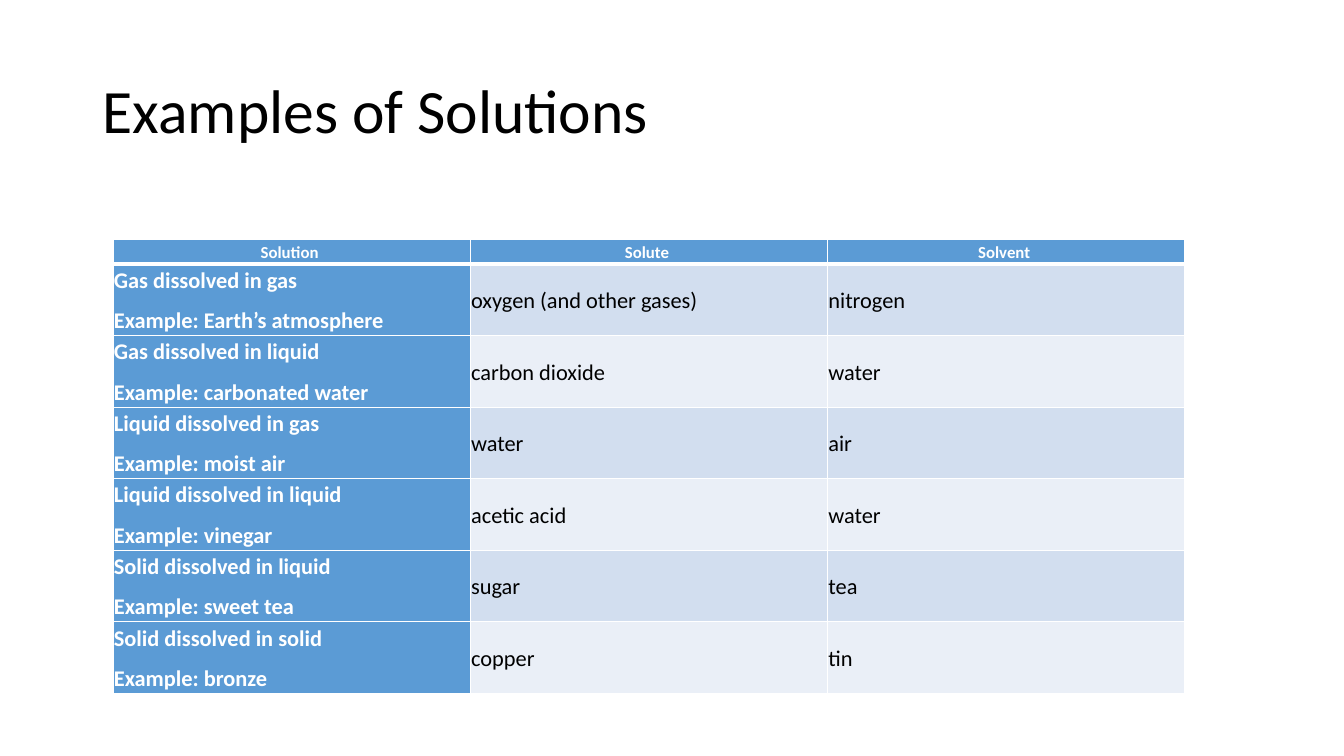
from lxml import etree
from pptx import Presentation
from pptx import util as u
from pptx.dml.color import RGBColor
from pptx.enum import text
from pptx.oxml.ns import qn

FONT = "Calibri"
BLUE, WHITE, BLACK = "5B9BD5", "FFFFFF", "000000"
BANDS = ("D2DEEF", "EAEFF7")
HEADINGS = ("Solution ", "Solute ", "Solvent ")
SOLUTIONS = (
    ("Gas dissolved in gas\nExample: Earth’s atmosphere", "oxygen (and other gases)", "nitrogen"),
    ("Gas dissolved in liquid\nExample: carbonated water", "carbon dioxide", "water"),
    ("Liquid dissolved in gas\nExample: moist air", "water", "air"),
    ("Liquid dissolved in liquid\nExample: vinegar", "acetic acid", "water"),
    ("Solid dissolved in liquid\nExample: sweet tea", "sugar", "tea"),
    ("Solid dissolved in solid\nExample: bronze", "copper", "tin"),
)
HEADER_HEIGHT, ROW_HEIGHT = 0.24, 0.71


def color(value):
    """Turn a hex string into a colour."""
    return RGBColor.from_string(value)


def set_attributes(target, values):
    """Set every attribute named in a dict of format values."""
    for name, value in values.items():
        setattr(target, name, value)


def write_text(frame, content, font, ink, layout):
    """Write one formatted paragraph for each line of the content."""
    frame.text = content
    for paragraph in frame.paragraphs:
        set_attributes(paragraph, layout)
        run = paragraph.runs[0]
        set_attributes(run.font, {"name": FONT, **font})
        run.font.color.rgb = color(ink)


def add_borders(cell, widths):
    """Draw white cell borders from a dict of side and width in points."""
    properties = cell._tc.get_or_add_tcPr()
    for index, (side, width) in enumerate(widths.items()):
        line = etree.Element(qn(f"a:ln{side}"), w=str(u.Pt(width)))
        fill = etree.SubElement(line, qn("a:solidFill"))
        etree.SubElement(fill, qn("a:srgbClr"), val=WHITE)
        properties.insert(index, line)


def add_title(slide, left, top, width, height):
    """Place the slide title in the given box."""
    box = slide.shapes.add_textbox(*map(u.Inches, (left, top, width, height)))
    set_attributes(box.text_frame, {
        "word_wrap": True, "vertical_anchor": text.MSO_ANCHOR.MIDDLE})
    write_text(box.text_frame, "Examples of Solutions", {"size": u.Pt(44)},
               BLACK, {"line_spacing": 0.9})


def format_cell(cell, content, row, column):
    """Fill a cell and style it as heading, row label or value."""
    is_header, is_label = row == 0, column == 0
    is_strong = is_header or is_label
    margin = u.Inches(0.01)
    set_attributes(cell, {
        "vertical_anchor": text.MSO_ANCHOR.MIDDLE, "margin_left": margin,
        "margin_right": margin, "margin_top": margin, "margin_bottom": margin})
    cell.fill.solid()
    cell.fill.fore_color.rgb = color(BLUE if is_strong else BANDS[(row - 1) % 2])
    layout = {
        "line_spacing": 1.07,
        "space_after": u.Pt(8 if is_label and not is_header else 0),
        "alignment": text.PP_ALIGN.CENTER if is_header else text.PP_ALIGN.LEFT}
    font = {"size": u.Pt(12 if is_header else 16), "bold": is_strong}
    write_text(cell.text_frame, content, font, WHITE if is_strong else BLACK, layout)
    add_borders(cell, {"L": 1, "R": 1, "T": 3 if row == 1 else 1,
                       "B": 3 if is_header else 1})


def add_solutions_table(slide, left, top, width):
    """Place the table of solutions with three equal columns."""
    rows = (HEADINGS, *SOLUTIONS)
    height = HEADER_HEIGHT + ROW_HEIGHT * len(SOLUTIONS)
    table = slide.shapes.add_table(
        len(rows), len(HEADINGS), *map(u.Inches, (left, top, width, height))).table
    for row, contents in enumerate(rows):
        table.rows[row].height = u.Inches(ROW_HEIGHT if row else HEADER_HEIGHT)
        for column, content in enumerate(contents):
            format_cell(table.cell(row, column), content, row, column)


def main():
    """Build and save the presentation."""
    presentation = Presentation()
    set_attributes(presentation, {
        "slide_width": u.Inches(13.33), "slide_height": u.Inches(7.5)})
    slide = presentation.slides.add_slide(presentation.slide_layouts[6])
    add_title(slide, 0.92, 0.4, 11.5, 1.45)
    add_solutions_table(slide, 1.12, 2.38, 10.63)
    presentation.save("out.pptx")


if __name__ == "__main__":
    main()
